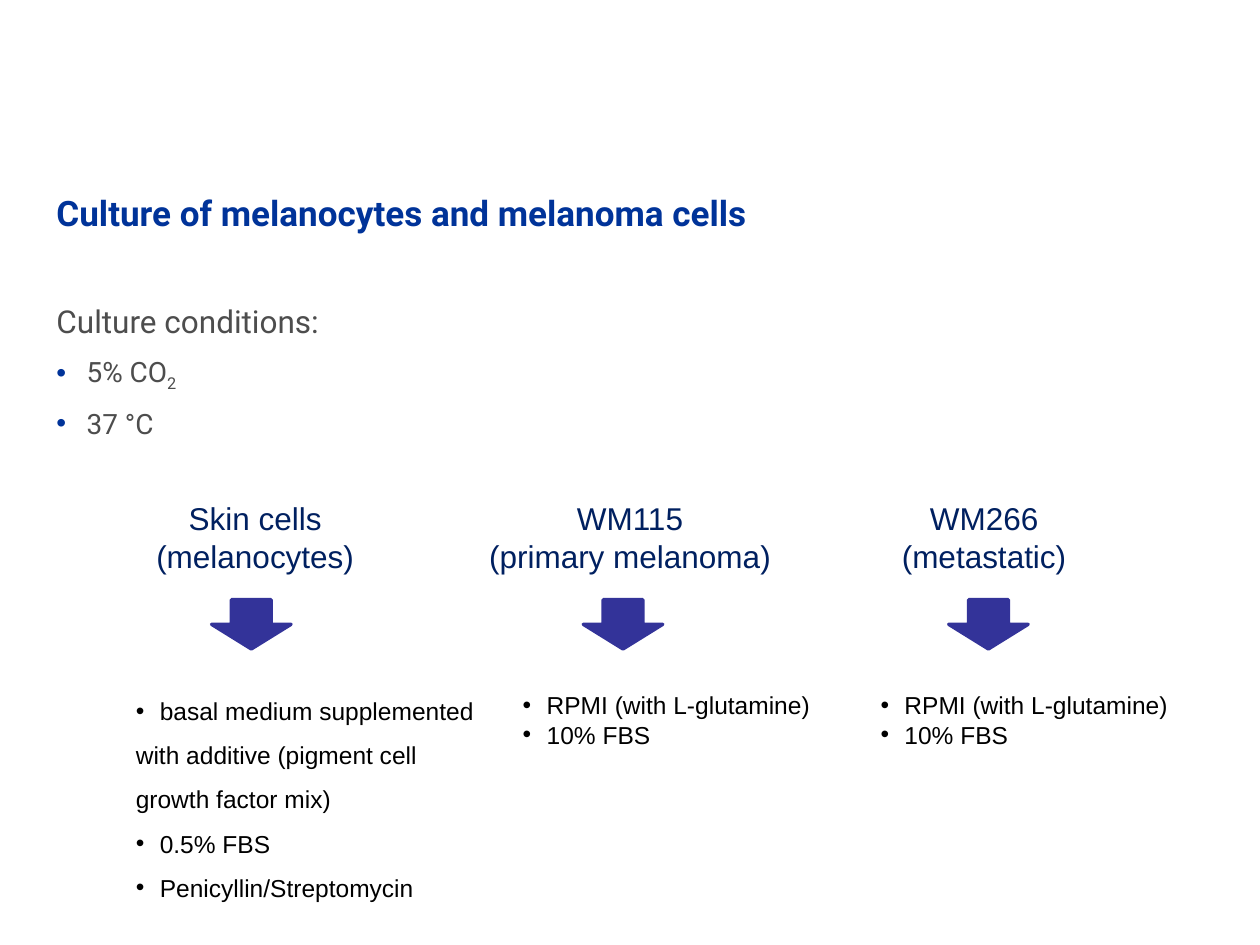
from lxml.etree import SubElement
from pptx import Presentation
from pptx.dml.color import RGBColor
from pptx.enum.shapes import MSO_SHAPE
from pptx.enum.text import PP_ALIGN
from pptx.oxml.ns import qn
from pptx.util import Inches, Pt

NAVY, BLUE, GREY, INDIGO, BLACK = "002060", "003399", "4D4D4D", "333399", "000000"
MEDIUM_INDENT = 0.19

# Heading lines, heading (left, width), arrow left
CELL_LINES = [
    (["Skin cells", "(melanocytes)"], (1.13, 1.79), 1.68),
    (["WM115", "(primary melanoma)"], (3.77, 2.46), 4.63),
    (["WM266", "(metastatic)"], (7.05, 1.52), 7.53),
]
RPMI_MEDIUM = [("RPMI (with L-glutamine)", True), ("10% FBS", True)]
MELANOCYTE_MEDIUM = [
    ("basal medium supplemented", True),
    ("with additive (pigment cell", False),
    ("growth factor mix)", False),
    ("0.5% FBS", True),
    ("Penicyllin/Streptomycin", True),
]


def color(hex_string):
    return RGBColor.from_string(hex_string)


def add_text_box(page, left, top, width, height, wrap=True):
    box = page.shapes.add_textbox(Inches(left), Inches(top), Inches(width), Inches(height))
    box.text_frame.word_wrap = wrap
    return box.text_frame


def add_para(frame, first=False, align=PP_ALIGN.LEFT, before=0, spacing=None):
    para = frame.paragraphs[0] if first else frame.add_paragraph()
    para.alignment = align
    para.space_before = Pt(before)
    if spacing:
        para.line_spacing = spacing
    return para


def add_bullet(para, indent, hex_string):
    properties = para._p.get_or_add_pPr()
    properties.set("marL", str(Inches(indent)))
    properties.set("indent", str(-Inches(indent)))
    fill = SubElement(SubElement(properties, qn("a:buClr")), qn("a:srgbClr"))
    fill.set("val", hex_string)
    SubElement(properties, qn("a:buFont")).set("typeface", "Arial")
    SubElement(properties, qn("a:buChar")).set("char", "•")


def add_span(para, text, size, hex_string, font="Arial", bold=False):
    span = para.add_run()
    span.text = text
    span.font.size = Pt(size)
    span.font.name = font
    span.font.bold = bold
    span.font.color.rgb = color(hex_string)
    return span


def add_conditions(page):
    frame = add_text_box(page, 0.35, 1.47, 9.17, 2.15)
    title = add_para(frame, first=True)
    add_span(title, "Culture of melanocytes and melanoma cells", 20, BLUE, "Roboto", True)
    add_span(add_para(frame, before=39.4), "Culture conditions:", 18, GREY, "Roboto")
    for text, subscript in [("5% CO", "2"), ("37 °C", None)]:
        para = add_para(frame, before=8)
        add_bullet(para, 0.24, BLUE)
        add_span(para, text, 16, GREY, "Roboto")
        if subscript:
            span = add_span(para, subscript, 16, GREY, "Roboto")
            span.font._element.set("baseline", "-25000")


def add_cell_heading(page, lines, left, width):
    frame = add_text_box(page, left, 3.91, width, 0.71, wrap=False)
    for number, line in enumerate(lines):
        para = add_para(frame, number == 0, PP_ALIGN.CENTER)
        add_span(para, line, 18, NAVY)


def add_down_arrow(page, left):
    arrow = page.shapes.add_shape(
        MSO_SHAPE.DOWN_ARROW, Inches(left), Inches(4.76), Inches(0.63), Inches(0.39))
    arrow.shadow.inherit = False
    arrow.fill.solid()
    arrow.fill.fore_color.rgb = color(INDIGO)
    arrow.line.color.rgb = color(INDIGO)
    arrow.line.width = Pt(2)


def add_medium(page, items, place, wrap=True, align=PP_ALIGN.LEFT, spacing=None):
    frame = add_text_box(page, *place, wrap=wrap)
    for number, (text, bulleted) in enumerate(items):
        para = add_para(frame, number == 0, align, spacing=spacing)
        if bulleted:
            add_bullet(para, MEDIUM_INDENT, BLACK)
        add_span(para, text, 14, BLACK)


def main():
    deck = Presentation()
    deck.slide_width, deck.slide_height = Inches(10), Inches(7.5)
    page = deck.slides.add_slide(deck.slide_layouts[6])

    # Title and shared conditions
    add_conditions(page)

    # Cell lines with arrows to their media
    for lines, (left, width), arrow_left in CELL_LINES:
        add_cell_heading(page, lines, left, width)
        add_down_arrow(page, arrow_left)

    # Culture media
    add_medium(page, MELANOCYTE_MEDIUM, (0.98, 5.36, 3.07, 1.82),
               align=PP_ALIGN.JUSTIFY, spacing=1.5)
    add_medium(page, RPMI_MEDIUM, (4.05, 5.43, 2.49, 0.57), wrap=False)
    add_medium(page, RPMI_MEDIUM, (6.89, 5.43, 2.84, 0.57))

    deck.save("out.pptx")


if __name__ == "__main__":
    main()
